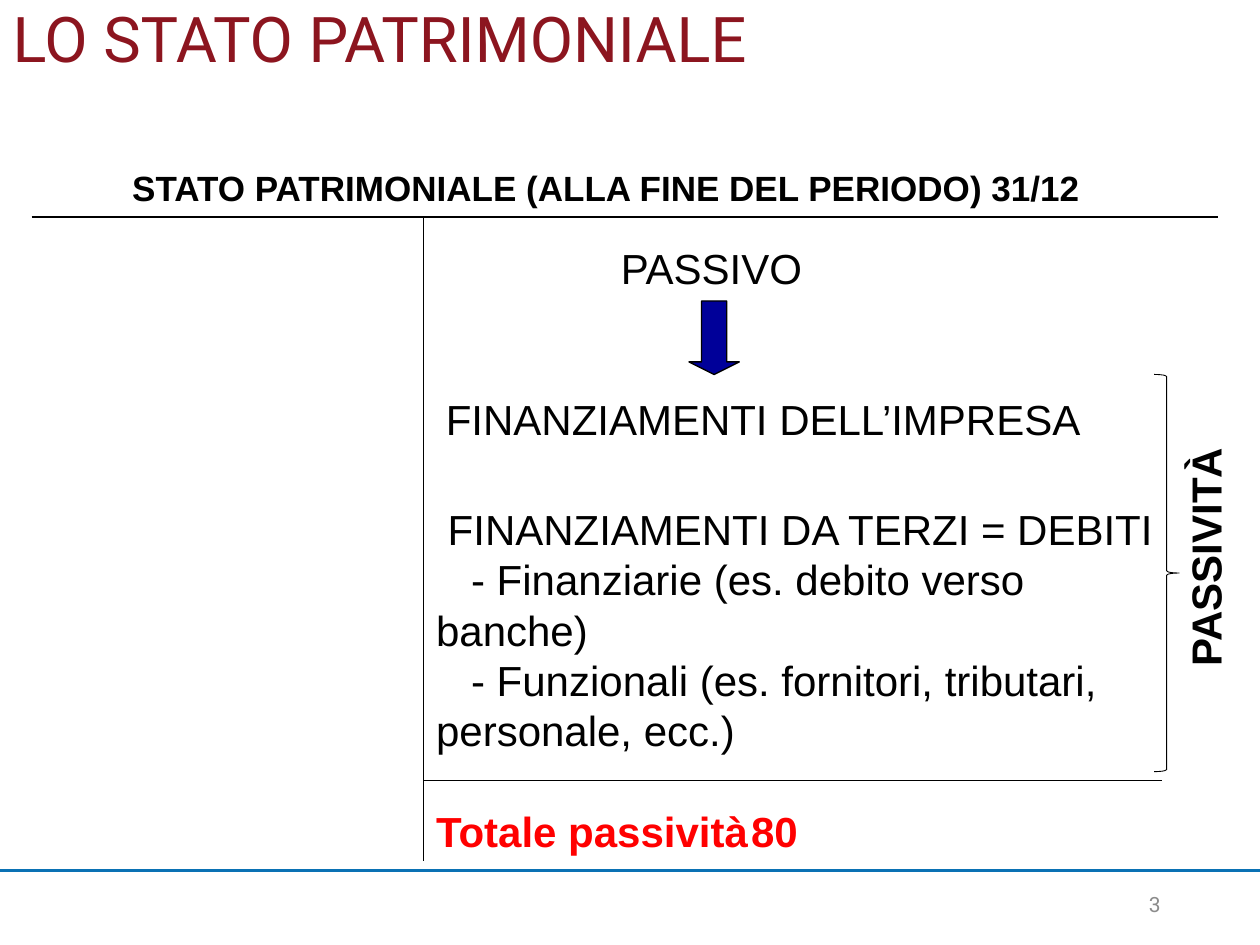
from pptx import Presentation
from pptx.dml.color import RGBColor
from pptx.enum.shapes import MSO_CONNECTOR, MSO_SHAPE
from pptx.enum.text import MSO_ANCHOR, MSO_AUTO_SIZE, PP_ALIGN
from pptx.oxml.ns import qn
from pptx.util import Pt
from lxml.etree import SubElement

COLORS = {
    "title": "8C151F", "text": "000000", "total": "FF0000",
    "arrow": "000099", "rule": "0A71B4", "page": "8C8C8C",
}
LEAD = 28.8


def color(name):
    return RGBColor.from_string(COLORS[name])


def place(shape, left, top, width, height):
    shape.left, shape.top = Pt(left), Pt(top)
    shape.width, shape.height = Pt(width), Pt(height)


def set_frame(frame):
    frame.word_wrap = True
    frame.auto_size = MSO_AUTO_SIZE.NONE
    frame.vertical_anchor = MSO_ANCHOR.TOP


def style(para, size=24, name="text", bold=False, font="Arial",
          align=PP_ALIGN.LEFT, lead=None, before=0, indent=0, tab=None):
    props = para._p.get_or_add_pPr()
    props.set("marL", "0")
    props.set("indent", str(Pt(indent)))
    SubElement(props, qn("a:buNone"))
    if tab:
        tabs = SubElement(props, qn("a:tabLst"))
        SubElement(tabs, qn("a:tab"), pos=str(Pt(tab)), algn="l")
    para.alignment = align
    para.space_before = Pt(before)
    if lead:
        para.line_spacing = lead
    for run in para.runs:
        run.font.size = Pt(size)
        run.font.name = font
        run.font.bold = bold
        run.font.color.rgb = color(name)


def add_text(slide, box, text):
    shape = slide.shapes.add_textbox(*map(Pt, box))
    set_frame(shape.text_frame)
    shape.text_frame.text = text
    return shape.text_frame


def add_line(slide, x1, y1, x2, y2, width=0.75, name="text"):
    line = slide.shapes.add_connector(
        MSO_CONNECTOR.STRAIGHT, Pt(x1), Pt(y1), Pt(x2), Pt(y2))
    line.line.color.rgb = color(name)
    line.line.width = Pt(width)
    SubElement(line._element.spPr, qn("a:effectLst"))


def add_preset(slide, kind, box, width, fill=None):
    shape = slide.shapes.add_shape(kind, *map(Pt, box))
    shape.shadow.inherit = False
    shape.line.color.rgb = color("text")
    shape.line.width = Pt(width)
    if fill:
        shape.fill.solid()
        shape.fill.fore_color.rgb = color(fill)
    else:
        shape.fill.background()
    return shape


def add_title(slide, left, top, width, height):
    title = slide.shapes.title
    place(title, left, top, width, height)
    set_frame(title.text_frame)
    title.text_frame.text = "LO STATO PATRIMONIALE"
    style(title.text_frame.paragraphs[0], 36, "title", font="Roboto", lead=0.9)


def add_ledger(slide, left, top, width, height):
    head = add_text(slide, (left + 4.3, top - 32.5, 648, 36),
                    "STATO PATRIMONIALE (ALLA FINE DEL PERIODO) 31/12")
    style(head.paragraphs[0], 20, bold=True, align=PP_ALIGN.CENTER)
    add_line(slide, left, top, left + width, top)
    middle = left + 224
    add_line(slide, middle, top, middle, top + height)
    add_line(slide, middle, top + 322, middle + 422, top + 322, 0.5)


def add_funds(slide, left, top, width, height):
    frame = add_text(slide, (left, top, width, height),
                     "PASSIVO\nFINANZIAMENTI DELL’IMPRESA")
    first, second = frame.paragraphs
    style(first, lead=Pt(LEAD), indent=100)
    style(second, lead=Pt(LEAD), before=2 * LEAD)
    arrow = add_preset(slide, MSO_SHAPE.DOWN_ARROW,
                       (left + 146, top + 37, 28.8, 42), 0.75, "arrow")
    arrow.adjustments[0] = 0.5
    arrow.adjustments[1] = 0.25


def add_debts(slide, left, top, width, height):
    body = slide.placeholders[1]
    place(body, left, top, width, height)
    set_frame(body.text_frame)
    rows = [
        ("FINANZIAMENTI DA TERZI = DEBITI", {"indent": 6.67}),
        ("- Finanziarie (es. debito verso banche)", {"indent": 20}),
        ("- Funzionali (es. fornitori, tributari, personale, ecc.)", {"indent": 20}),
        ("Totale passività\t80",
         {"name": "total", "bold": True, "before": LEAD, "tab": 304.6}),
    ]
    body.text_frame.text = "\n".join(text for text, _ in rows)
    for para, (_, look) in zip(body.text_frame.paragraphs, rows):
        style(para, lead=Pt(LEAD), **look)


def add_side(slide, left, top, width, height):
    add_preset(slide, MSO_SHAPE.RIGHT_BRACE, (left, top, 14.4, height), 0.5)
    frame = add_text(slide, (left + 11, top, width - 11, 174), "PASSIVITÀ")
    frame._txBody.bodyPr.set("vert", "vert270")
    style(frame.paragraphs[0], bold=True)


def add_foot(slide, left, top, width, height):
    add_line(slide, left, top, left + width, top, 1.5, "rule")
    frame = add_text(slide, (left + 508.3, top + 8.6, 162, height - 13.8), "3")
    style(frame.paragraphs[0], 12, "page", font="Roboto", align=PP_ALIGN.RIGHT)


def main():
    deck = Presentation()
    deck.slide_width, deck.slide_height = Pt(720), Pt(540)
    slide = deck.slides.add_slide(deck.slide_layouts[1])
    add_foot(slide, 0, 497.5, 720, 42.5)
    add_title(slide, 0, 1, 720, 80)
    add_ledger(slide, 18, 124, 678, 368)
    add_funds(slide, 247.7, 135, 381, 124)
    add_debts(slide, 242, 284, 440, 240)
    add_side(slide, 659.5, 214, 55, 227)
    deck.save("out.pptx")


if __name__ == "__main__":
    main()
